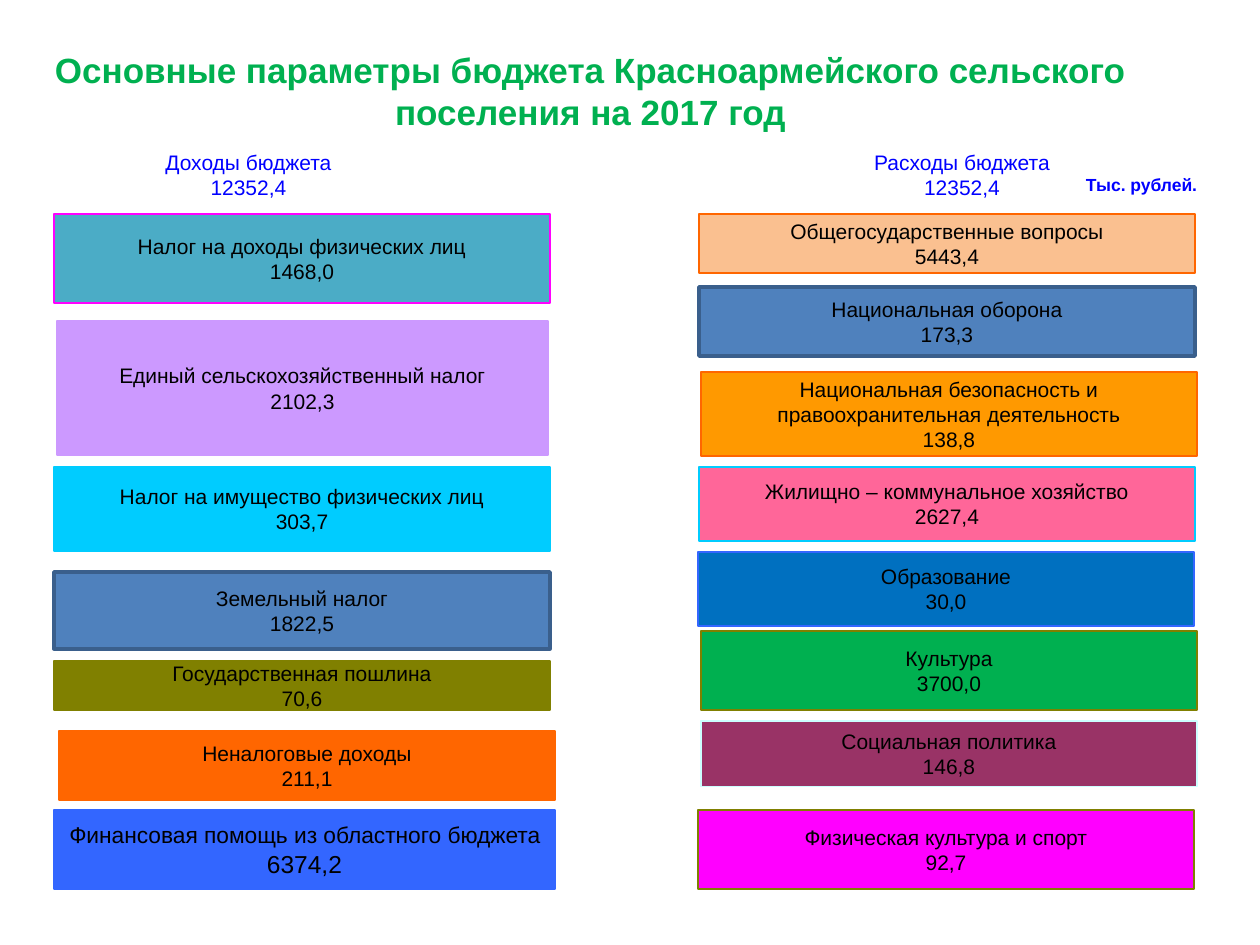
from pptx import Presentation
from pptx.dml.color import RGBColor
from pptx.enum.shapes import MSO_SHAPE
from pptx.enum.text import MSO_ANCHOR, PP_ALIGN
from pptx.util import Emu, Pt

PX_PER_INCH = 126
FONT = "Arial"

BLACK = RGBColor(0x00, 0x00, 0x00)
WHITE = RGBColor(0xFF, 0xFF, 0xFF)
GREEN = RGBColor(0x00, 0xB0, 0x50)
BLUE = RGBColor(0x00, 0x00, 0xFF)
TEAL = RGBColor(0x4B, 0xAC, 0xC6)
MAGENTA = RGBColor(0xFF, 0x00, 0xFF)
LILAC = RGBColor(0xCC, 0x99, 0xFF)
CYAN = RGBColor(0x00, 0xCC, 0xFF)
STEEL = RGBColor(0x4F, 0x81, 0xBD)
DARK_STEEL = RGBColor(0x3A, 0x5F, 0x8C)
OLIVE = RGBColor(0x80, 0x80, 0x00)
ORANGE = RGBColor(0xFF, 0x66, 0x00)
ROYAL = RGBColor(0x33, 0x66, 0xFF)
PEACH = RGBColor(0xFA, 0xC0, 0x90)
AMBER = RGBColor(0xFF, 0x99, 0x00)
PINK = RGBColor(0xFF, 0x66, 0x99)
OCEAN = RGBColor(0x00, 0x70, 0xC0)
PLUM = RGBColor(0x99, 0x33, 0x66)
PALE_CYAN = RGBColor(0xCC, 0xFF, 0xFF)

TITLE = "Основные параметры бюджета Красноармейского сельского поселения на 2017 год"

INCOME = [
    ((54, 214, 496, 89), TEAL, MAGENTA, ["Налог на доходы физических лиц", "1468,0"]),
    ((57, 321, 491, 134), LILAC, LILAC, ["Единый сельскохозяйственный налог", "2102,3"]),
    ((54, 467, 496, 84), CYAN, CYAN, ["Налог на имущество физических лиц", "303,7"]),
    ((54, 572, 496, 77), STEEL, DARK_STEEL, ["Земельный налог", "1822,5"]),
    ((54, 661, 496, 49), OLIVE, OLIVE, ["Государственная пошлина", "70,6"]),
    ((59, 731, 496, 69), ORANGE, ORANGE, ["Неналоговые доходы", "211,1"]),
]

EXPENSES = [
    ((699, 214, 496, 59), PEACH, ORANGE, ["Общегосударственные вопросы", "5443,4"]),
    ((699, 287, 496, 69), STEEL, DARK_STEEL, ["Национальная оборона", "173,3"]),
    ((701, 372, 496, 84), AMBER, ORANGE,
     ["Национальная безопасность и", "правоохранительная деятельность", "138,8"]),
    ((699, 467, 496, 74), PINK, CYAN, ["Жилищно – коммунальное хозяйство", "2627,4"]),
    ((698, 552, 496, 74), OCEAN, ROYAL, ["Образование", "30,0"]),
    ((701, 631, 496, 79), GREEN, OLIVE, ["Культура", "3700,0"]),
    ((701, 721, 496, 66), PLUM, PALE_CYAN, ["Социальная политика", "146,8"]),
    ((698, 810, 496, 79), MAGENTA, OLIVE, ["Физическая культура и спорт", "92,7"]),
]


def px(length):
    return Emu(round(length * 914400 / PX_PER_INCH))


def write_lines(frame, lines, sizes, color, bold=False):
    frame.vertical_anchor = MSO_ANCHOR.MIDDLE
    for index, (line, size) in enumerate(zip(lines, sizes)):
        paragraph = frame.paragraphs[0] if index == 0 else frame.add_paragraph()
        paragraph.text = line
        paragraph.alignment = PP_ALIGN.CENTER
        paragraph.font.name = FONT
        paragraph.font.size = Pt(size)
        paragraph.font.bold = bold
        paragraph.font.color.rgb = color


def add_title(slide):
    title = slide.shapes.add_textbox(*map(px, (0, 35, 1181, 110)))
    title.text_frame.word_wrap = True
    write_lines(title.text_frame, [TITLE], [20], GREEN, bold=True)


def add_block(slide, box, fill, outline, lines, sizes=(12, 12, 12), color=BLACK, bold=False):
    block = slide.shapes.add_shape(MSO_SHAPE.RECTANGLE, *map(px, box))
    block.shadow.inherit = False
    if fill is None:
        block.fill.background()
    else:
        block.fill.solid()
        block.fill.fore_color.rgb = fill
    block.line.color.rgb = outline
    block.line.width = Pt(2 if outline == DARK_STEEL else 0.75)
    block.text_frame.word_wrap = outline == DARK_STEEL
    write_lines(block.text_frame, lines, sizes, color, bold)


def main():
    presentation = Presentation()
    presentation.slide_width = px(1260)
    presentation.slide_height = px(945)
    slide = presentation.slides.add_slide(presentation.slide_layouts[6])

    add_title(slide)
    add_block(slide, (105, 145, 287, 59), WHITE, WHITE, ["Доходы бюджета", "12352,4"], color=BLUE)
    add_block(slide, (828, 145, 268, 59), WHITE, WHITE, ["Расходы бюджета", "12352,4"], color=BLUE)
    add_block(slide, (1067, 165, 149, 40), None, WHITE, ["Тыс. рублей."], [10], BLUE, bold=True)
    for item in INCOME + EXPENSES:
        add_block(slide, *item)
    add_block(slide, (54, 810, 501, 79), ROYAL, ROYAL,
              ["Финансовая помощь из областного бюджета", "6374,2"], [13, 14])

    presentation.save("out.pptx")


if __name__ == "__main__":
    main()
